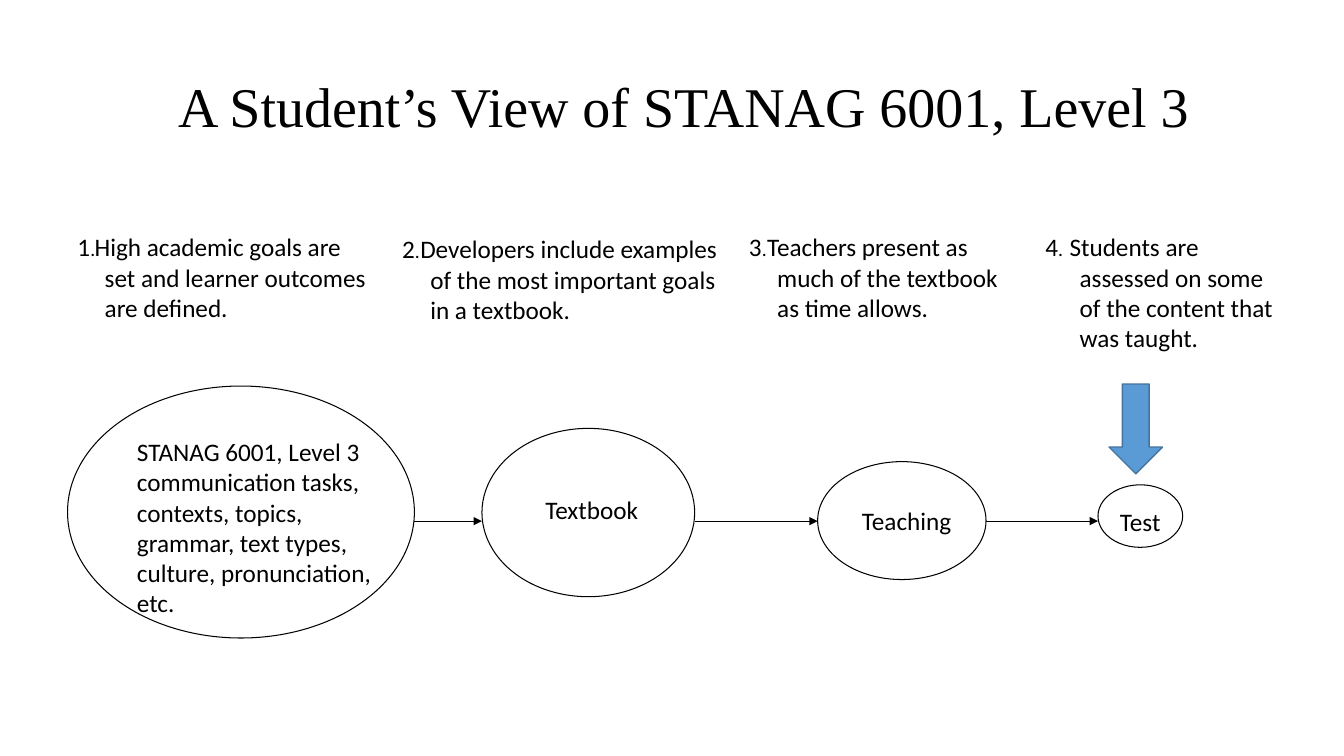
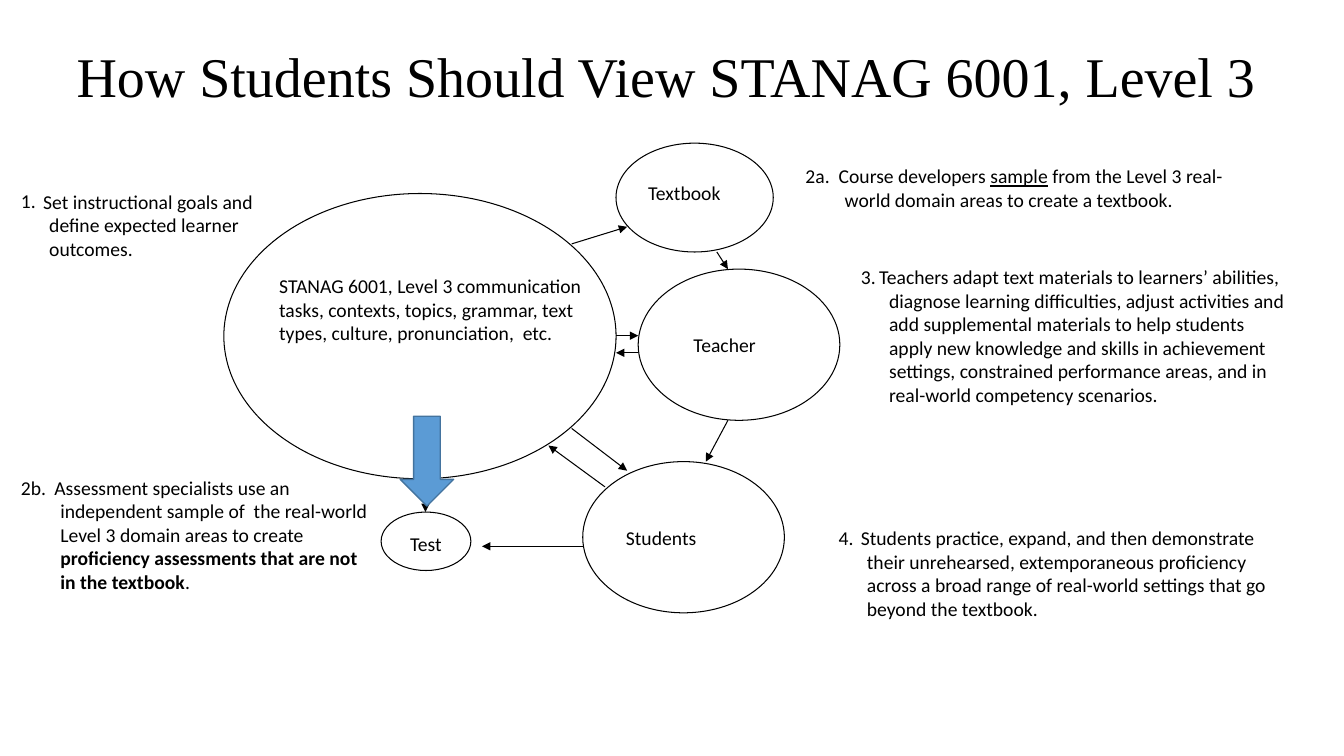
from itertools import pairwise

from lxml.etree import SubElement
from pptx import Presentation
from pptx.dml.color import RGBColor
from pptx.enum.shapes import MSO_CONNECTOR as CONNECTOR, MSO_SHAPE as SHAPE
from pptx.enum.text import MSO_ANCHOR as ANCHOR, PP_ALIGN as ALIGN
from pptx.oxml.ns import qn
from pptx.util import Inches, Pt

COLORS = {"ink": "000000", "arrow": "5B9BD5", "arrow_edge": "43739E"}
TITLE_FONT, BODY_FONT = "Times New Roman", "Calibri"
TITLE_SIZE = 40
HANG = 0.5


def color(key):
    """Look up a shared colour."""
    return RGBColor.from_string(COLORS[key])


def add_text(slide, box, segments, font=BODY_FONT):
    """Write (text, size, emphasis) segments as one paragraph in a wrapping box."""
    frame = slide.shapes.add_textbox(*map(Inches, box)).text_frame
    frame.word_wrap = True
    paragraph = frame.paragraphs[0]
    for text, size, emphasis in segments:
        run = paragraph.add_run()
        run.text = text
        run.font.name, run.font.size = font, Pt(size)
        run.font.color.rgb = color("ink")
        run.font.bold = emphasis == "bold"
        run.font.underline = emphasis == "underline"
    return frame


def add_title(slide, box, text):
    """Centre the slide title in its box."""
    frame = add_text(slide, box, [(text, TITLE_SIZE, None)], TITLE_FONT)
    frame.vertical_anchor = ANCHOR.MIDDLE
    frame.paragraphs[0].alignment = ALIGN.CENTER
    frame.paragraphs[0].line_spacing = 0.9


def add_stage(slide, box, label, offset, size, label_width=1.5):
    """Draw an outlined oval with its label offset from the oval's corner."""
    oval = slide.shapes.add_shape(SHAPE.OVAL, *map(Inches, box))
    oval.shadow.inherit = False
    oval.fill.background()
    oval.line.color.rgb = color("ink")
    oval.line.width = Pt(0.75)
    label_box = (box[0] + offset[0], box[1] + offset[1], label_width, 0.4)
    add_text(slide, label_box, [(label, size, None)])


def add_note(slide, box, number, number_dx, segments, first_line=-0.1):
    """Place a hanging note and its number, shifted from the note's left edge."""
    frame = add_text(slide, box, segments)
    properties = frame.paragraphs[0]._p.get_or_add_pPr()
    properties.set("marL", str(Inches(HANG)))
    properties.set("indent", str(Inches(first_line)))
    add_text(slide, (box[0] + number_dx, box[1], 0.65, 0.4), number)


def add_flow(slide, start, end):
    """Draw a thin line with an arrowhead at its end."""
    flow = slide.shapes.add_connector(CONNECTOR.STRAIGHT, *map(Inches, (*start, *end)))
    flow.line.color.rgb = color("ink")
    flow.line.width = Pt(0.75)
    SubElement(flow.line._get_or_add_ln(), qn("a:tailEnd"), type="triangle")
    SubElement(flow._element.spPr, qn("a:effectLst"))


def add_test_pointer(slide, left, top):
    """Draw the blue block arrow that points at the test."""
    pointer = slide.shapes.add_shape(
        SHAPE.DOWN_ARROW, *map(Inches, (left, top, 0.53, 0.89)))
    pointer.shadow.inherit = False
    pointer.fill.solid()
    pointer.fill.fore_color.rgb = color("arrow")
    pointer.line.color.rgb = color("arrow_edge")
    pointer.line.width = Pt(1)


def build_student_view(slide):
    """Build the linear chain from goals to test."""
    add_title(slide, (0.67, 0.17, 12.22, 1.83), "A Student’s View of STANAG 6001, Level 3")
    stages = [
        ((0.67, 3.83, 3.44, 2.5), "STANAG 6001, Level 3 communication tasks, contexts, "
         "topics, grammar, text types, culture, pronunciation, etc.", (0.59, 0.45), 2.78),
        ((4.78, 4.25, 2.11, 1.67), "Textbook", (0.53, 0.6), 1.52),
        ((8.11, 4.58, 1.67, 1.17), "Teaching", (0.34, 0.38), 1.15),
        ((10.89, 4.81, 0.84, 0.62), "Test", (0.12, 0.16), 0.77),
    ]
    for box, label, offset, label_width in stages:
        add_stage(slide, box, label, offset, 18, label_width)
    flow_y = 5.17
    for (source, *_), (target, *_) in pairwise(stages):
        add_flow(slide, (source[0] + source[2], flow_y), (target[0], flow_y))
    notes = [
        ((0.44, 2.25, 3.33, 1.01), 0.23,
         "High academic goals are set and learner outcomes are defined."),
        ((3.67, 2.27, 3.67, 1.01), 0.22,
         "Developers include examples of the most important goals in a textbook."),
        ((7.11, 2.25, 3.11, 1.01), 0.22,
         "Teachers present as much of the textbook as time allows."),
        ((10.11, 2.25, 2.78, 1.31), 0.16,
         "Students are assessed on some of the content that was taught."),
    ]
    for number, (box, number_dx, text) in enumerate(notes, 1):
        add_note(slide, box, [(str(number), 18, None), (".", 14, None)], number_dx,
                 [(text, 18, None)])
    add_test_pointer(slide, 11, 3.81)


def build_recommended_view(slide):
    """Build the network in which the real-world domain feeds every stage."""
    size = 14
    add_title(slide, (0.44, 0.08, 12.33, 1.42),
              "How Students Should View STANAG 6001, Level 3")
    add_stage(slide, (2.22, 1.92, 3.89, 2.83),
              "STANAG 6001, Level 3 communication tasks, contexts, topics, grammar, "
              "text types, culture, pronunciation,  etc.", (0.45, 0.75), size, 3.22)
    for box, label, offset in [
        ((6.11, 1.42, 1.56, 1.08), "Textbook", (0.22, 0.33)),
        ((6.33, 2.67, 2, 1.5), "Teacher", (0.45, 0.58)),
        ((5.78, 4.58, 2, 1.5), "Students", (0.33, 0.59)),
        ((3.78, 5.08, 0.89, 0.58), "Test", (0.19, 0.15)),
    ]:
        add_stage(slide, box, label, offset, size)
    for start, end in [
        ((5.67, 2.42), (6.22, 2.25)),
        ((7.11, 2.5), (7.22, 2.67)),
        ((6.11, 3.33), (6.33, 3.33)),
        ((6.33, 3.5), (6.11, 3.5)),
        ((7.22, 4.17), (7, 4.58)),
        ((5.78, 5.42), (4.78, 5.42)),
        ((4.22, 4.75), (4.22, 5.08)),
        ((6, 4.83), (5.44, 4.42)),
        ((5.67, 4.25), (6.22, 4.67)),
    ]:
        add_flow(slide, start, end)
    for box, number, number_dx, first_line, segments in [
        ((-0.11, 1.83, 3, 0.81), "1.", 0.22, -0.06,
         [("Set instructional goals and define expected learner outcomes.", None)]),
        ((7.78, 1.58, 4.56, 0.57), "2a.", 0.11, -0.06,
         [("Course developers ", None), ("sample", "underline"),
          (" from the Level 3 real-world domain areas to create a textbook.", None)]),
        ((0, 4.67, 3.78, 1.28), "2b.", 0.11, -0.06,
         [("Assessment specialists use an independent sample of  the real-world "
           "Level 3 domain areas to create ", None),
          ("proficiency assessments that are not in the textbook", "bold"), (".", None)]),
        ((8.22, 2.58, 4.67, 1.51), "3.", 0.22, -0.1,
         [("Teachers adapt text materials to learners’ abilities, diagnose learning "
           "difficulties, adjust activities and add supplemental materials to help "
           "students apply new knowledge and skills in achievement settings, constrained "
           "performance areas, and in real-world competency scenarios.", None)]),
        ((8, 5.17, 4.67, 1.04), "4.", 0.22, -0.06,
         [("Students practice, expand, and then demonstrate their unrehearsed, "
           "extemporaneous proficiency across a broad range of real-world settings "
           "that go beyond the textbook.", None)]),
    ]:
        add_note(slide, box, [(number, size, None)], number_dx,
                 [(text, size, emphasis) for text, emphasis in segments], first_line)
    add_test_pointer(slide, 3.97, 4.13)


def main():
    """Create the presentation and save it."""
    deck = Presentation()
    deck.slide_width, deck.slide_height = Inches(13.33), Inches(7.5)
    for build in (build_student_view, build_recommended_view):
        build(deck.slides.add_slide(deck.slide_layouts[6]))
    deck.save("out.pptx")


if __name__ == "__main__":
    main()
